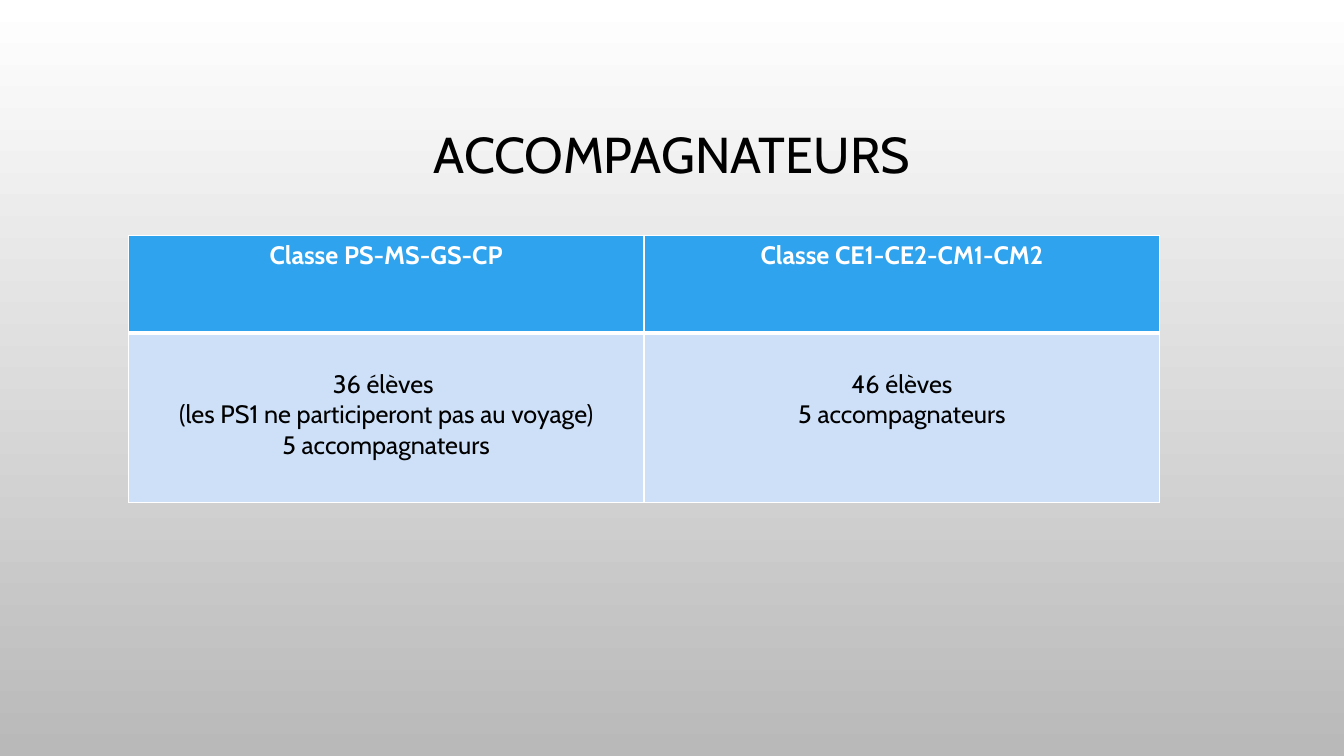
from dataclasses import dataclass

from lxml import etree
from pptx import Presentation
from pptx import util as u
from pptx.dml.color import RGBColor
from pptx.enum import text
from pptx.oxml import ns


@dataclass(frozen=True)
class Theme:
    font: str = "Cabin"
    title_size: int = 36
    table_size: int = 18
    ink: str = "000000"
    white: str = "FFFFFF"
    background_end: str = "B9B9B9"
    header_fill: str = "2FA3EE"
    body_fill: str = "CDE0F8"
    thin_line: int = 1
    thick_line: int = 3


class SlideBuilder:
    def __init__(self, presentation, theme):
        self.theme = theme
        self.slide = presentation.slides.add_slide(presentation.slide_layouts[5])

    def background(self):
        fill = self.slide.background.fill
        fill.gradient()
        fill.gradient_angle = 270
        colors = (self.theme.white, self.theme.background_end)
        for stop, color in zip(fill.gradient_stops, colors):
            stop.color.rgb = RGBColor.from_string(color)

    def format_paragraph(self, paragraph, size, color, bold=False):
        paragraph.alignment = text.PP_ALIGN.CENTER
        font = paragraph.font
        font.name, font.size, font.bold = self.theme.font, u.Pt(size), bold
        font.color.rgb = RGBColor.from_string(color)

    def title(self, wording, left, top, width, height):
        title = self.slide.shapes.title
        title.left, title.top = u.Cm(left), u.Cm(top)
        title.width, title.height = u.Cm(width), u.Cm(height)
        title.text_frame.text = wording
        title.text_frame.vertical_anchor = text.MSO_ANCHOR.MIDDLE
        paragraph = title.text_frame.paragraphs[0]
        paragraph.line_spacing = 0.9
        self.format_paragraph(paragraph, self.theme.title_size, self.theme.ink)

    def borders(self, cell, **widths):
        """Draw white borders; widths in points, in the order L, R, T, B."""
        properties = cell._tc.get_or_add_tcPr()
        for side, width in widths.items():
            line = etree.SubElement(properties, ns.qn(f"a:ln{side}"), w=str(u.Pt(width)))
            fill = etree.SubElement(line, ns.qn("a:solidFill"))
            etree.SubElement(fill, ns.qn("a:srgbClr"), val=self.theme.white)

    def cell(self, cell, wording, is_header):
        theme = self.theme
        thin, thick = theme.thin_line, theme.thick_line
        self.borders(cell, L=thin, R=thin, T=thin if is_header else thick,
                     B=thick if is_header else thin)
        cell.fill.solid()
        cell.fill.fore_color.rgb = RGBColor.from_string(
            theme.header_fill if is_header else theme.body_fill)
        cell.margin_top = u.Cm(0.13 if is_header else 0.9)
        cell.text_frame.text = wording
        for paragraph in cell.text_frame.paragraphs:
            self.format_paragraph(paragraph, theme.table_size,
                                  theme.white if is_header else theme.ink, is_header)

    def table(self, rows, left, top, column_width, row_heights):
        columns = len(rows[0])
        table = self.slide.shapes.add_table(
            len(rows), columns, u.Cm(left), u.Cm(top),
            u.Cm(column_width * columns), u.Cm(sum(row_heights))).table
        table.horz_banding = False
        for row_index, (wordings, height) in enumerate(zip(rows, row_heights)):
            table.rows[row_index].height = u.Cm(height)
            for column_index, wording in enumerate(wordings):
                self.cell(table.cell(row_index, column_index), wording, row_index == 0)


def main():
    presentation = Presentation()
    presentation.slide_width, presentation.slide_height = u.Cm(33.87), u.Cm(19.05)

    builder = SlideBuilder(presentation, Theme())
    builder.background()
    builder.title("ACCOMPAGNATEURS", left=2.54, top=1.73, width=28.78, height=4.45)
    builder.table(
        [
            ("Classe PS-MS-GS-CP", "Classe CE1-CE2-CM1-CM2"),
            ("36 élèves \n(les PS1 ne participeront pas au voyage)\n5 accompagnateurs",
             "46 élèves\n5 accompagnateurs"),
        ],
        left=3.23, top=5.93, column_width=13, row_heights=(2.46, 4.28))
    presentation.save("out.pptx")


if __name__ == "__main__":
    main()
